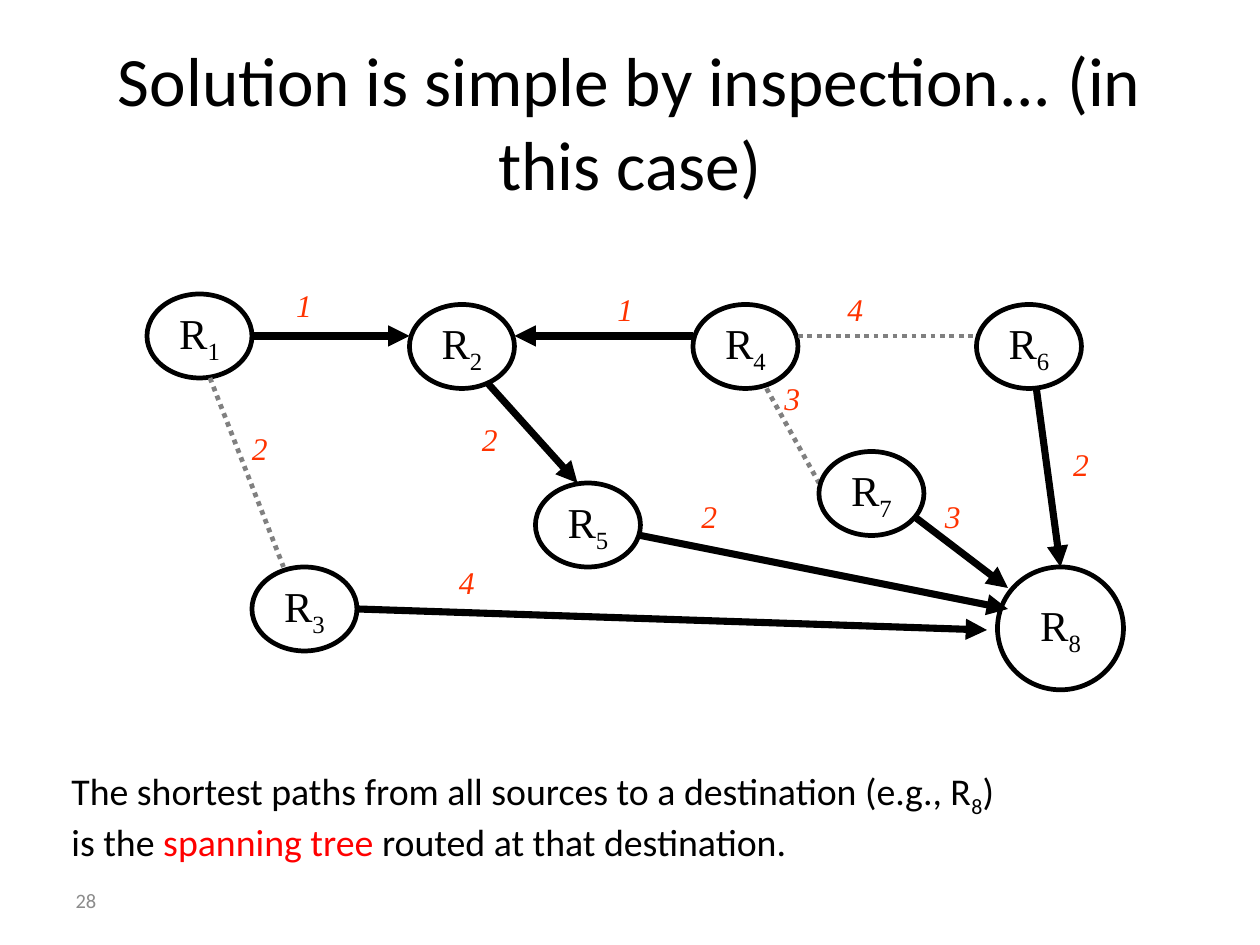
from pptx import Presentation
from pptx.dml.color import RGBColor
from pptx.enum.dml import MSO_LINE
from pptx.enum.shapes import MSO_CONNECTOR, MSO_SHAPE
from pptx.enum.text import MSO_ANCHOR, PP_ALIGN
from pptx.oxml.ns import qn
from pptx.util import Emu, Pt
from lxml import etree

SCALE = 914400 / 108  # EMU per px
OVAL = MSO_SHAPE.OVAL
STRAIGHT = MSO_CONNECTOR.STRAIGHT
DOTTED = MSO_LINE.ROUND_DOT
MIDDLE, TOP = MSO_ANCHOR.MIDDLE, MSO_ANCHOR.TOP
LEFT, CENTER = PP_ALIGN.LEFT, PP_ALIGN.CENTER
SANS, SERIF = "Calibri", "Times New Roman"
BLACK, WHITE, GRAY = "000000", "FFFFFF", "808080"

ROUTER_SIZE = (100, 80)
COST_SIZE = (39, 49)

# Router number: left, top
BACK_ROUTERS = {"3": (240, 540), "1": (140, 280), "5": (510, 460),
                "4": (660, 290), "6": (930, 290)}
FRONT_ROUTERS = {"2": (390, 290), "7": (780, 430)}
DESTINATION = ("8", (950, 540, 120, 117))

# Start x, start y, end x, end y
TREE_LINKS = [(240, 320, 390, 320), (660, 320, 490, 320), (340, 580, 940, 600),
              (855, 480, 960, 560), (460, 360, 550, 460), (610, 510, 960, 580)]
LINK_TO_DESTINATION_TOP = (987, 370, 1010, 540)
UNUSED_LINKS = [(760, 320, 930, 320), (200, 360, 270, 540), (730, 370, 780, 460)]

# Cost, left, top
COSTS = [("1", 270, 266), ("1", 576, 270), ("4", 795, 270), ("2", 1010, 418),
         ("4", 425, 530), ("2", 228, 403), ("2", 447, 394), ("3", 735, 355),
         ("2", 656, 467), ("3", 888, 467)]


def px(length):
    return Emu(round(length * SCALE))


def color(hex_string):
    return RGBColor.from_string(hex_string)


def add_run(paragraph, text, font, size, fill=BLACK, italic=False, subscript=False):
    run = paragraph.add_run()
    run.text = text
    run.font.name = font
    run.font.size = Pt(size)
    run.font.color.rgb = color(fill)
    if italic:
        run.font.italic = True
    if subscript:
        run.font._element.set("baseline", "-25000")


def format_frame(shape, anchor=TOP, align=LEFT, wrap=True):
    """Set the shared margins and return the first paragraph."""
    frame = shape.text_frame
    frame.margin_left = frame.margin_right = px(12)
    frame.margin_top = frame.margin_bottom = px(6)
    frame.vertical_anchor = anchor
    frame.word_wrap = wrap
    paragraph = frame.paragraphs[0]
    paragraph.alignment = align
    return paragraph


def add_text_box(slide, box):
    return slide.shapes.add_textbox(*map(px, box))


def add_title(slide, box):
    title = slide.shapes.title
    title.left, title.top, title.width, title.height = map(px, box)
    paragraph = format_frame(title, MIDDLE, CENTER)
    add_run(paragraph, "Solution is simple by inspection... (in this case)", SANS, 44)


def add_router(slide, number, box):
    router = slide.shapes.add_shape(OVAL, *map(px, box))
    router.shadow.inherit = False
    router.fill.solid()
    router.fill.fore_color.rgb = color(WHITE)
    router.line.color.rgb = color(BLACK)
    router.line.width = Pt(3)
    paragraph = format_frame(router, MIDDLE, CENTER, wrap=False)
    add_run(paragraph, "R", SERIF, 27)
    add_run(paragraph, number, SERIF, 27, subscript=True)
    return router


def add_link(slide, ends, in_tree=True):
    link = slide.shapes.add_connector(STRAIGHT, *map(px, ends))
    link.line.color.rgb = color(BLACK if in_tree else GRAY)
    link.line.width = Pt(4.5 if in_tree else 3)
    if in_tree:
        line = link.line._get_or_add_ln()
        etree.SubElement(line, qn("a:tailEnd"), type="triangle")
    else:
        link.line.dash_style = DOTTED
    etree.SubElement(link._element.spPr, qn("a:effectLst"))
    return link


def add_network(slide, box):
    left, top = box[:2]

    def place(x, y, width, height):
        return left + x, top + y, width, height

    def add_routers(routers):
        for number, corner in routers.items():
            add_router(slide, number, place(*corner, *ROUTER_SIZE))

    def shift(x1, y1, x2, y2):
        return left + x1, top + y1, left + x2, top + y2

    add_routers(BACK_ROUTERS)
    number, destination_box = DESTINATION
    destination = add_router(slide, number, place(*destination_box))
    for ends in UNUSED_LINKS:
        add_link(slide, shift(*ends), in_tree=False)
    for ends in TREE_LINKS:
        add_link(slide, shift(*ends))
    add_link(slide, shift(*LINK_TO_DESTINATION_TOP)).end_connect(destination, 0)
    add_routers(FRONT_ROUTERS)

    for cost, x, y in COSTS:
        label = add_text_box(slide, place(x, y, *COST_SIZE))
        paragraph = format_frame(label, wrap=False)
        add_run(paragraph, cost, SERIF, 20, "FF3300", italic=True)


def add_conclusion(slide, box):
    conclusion = add_text_box(slide, box)
    paragraph = format_frame(conclusion)
    add_run(paragraph, "The shortest paths from all sources to a destination (e.g., R", SANS, 24)
    add_run(paragraph, "8", SANS, 24, subscript=True)
    add_run(paragraph, ")", SANS, 24)
    paragraph = conclusion.text_frame.add_paragraph()
    add_run(paragraph, "is the ", SANS, 24)
    add_run(paragraph, "spanning tree", SANS, 24, "FF0000")
    add_run(paragraph, " routed at that destination.", SANS, 24)


def add_slide_number(slide, box):
    paragraph = format_frame(add_text_box(slide, box), MIDDLE)
    add_run(paragraph, "28", SANS, 13, "8C8C8C")


def main():
    presentation = Presentation()
    presentation.slide_width, presentation.slide_height = px(1200), px(900)
    slide = presentation.slides.add_slide(presentation.slide_layouts[5])
    add_title(slide, (90, 40, 1020, 150))
    add_network(slide, (0, 0, 1200, 700))
    add_conclusion(slide, (56, 725, 948, 100))
    add_slide_number(slide, (60, 834, 280, 47))
    presentation.save("out.pptx")


if __name__ == "__main__":
    main()
